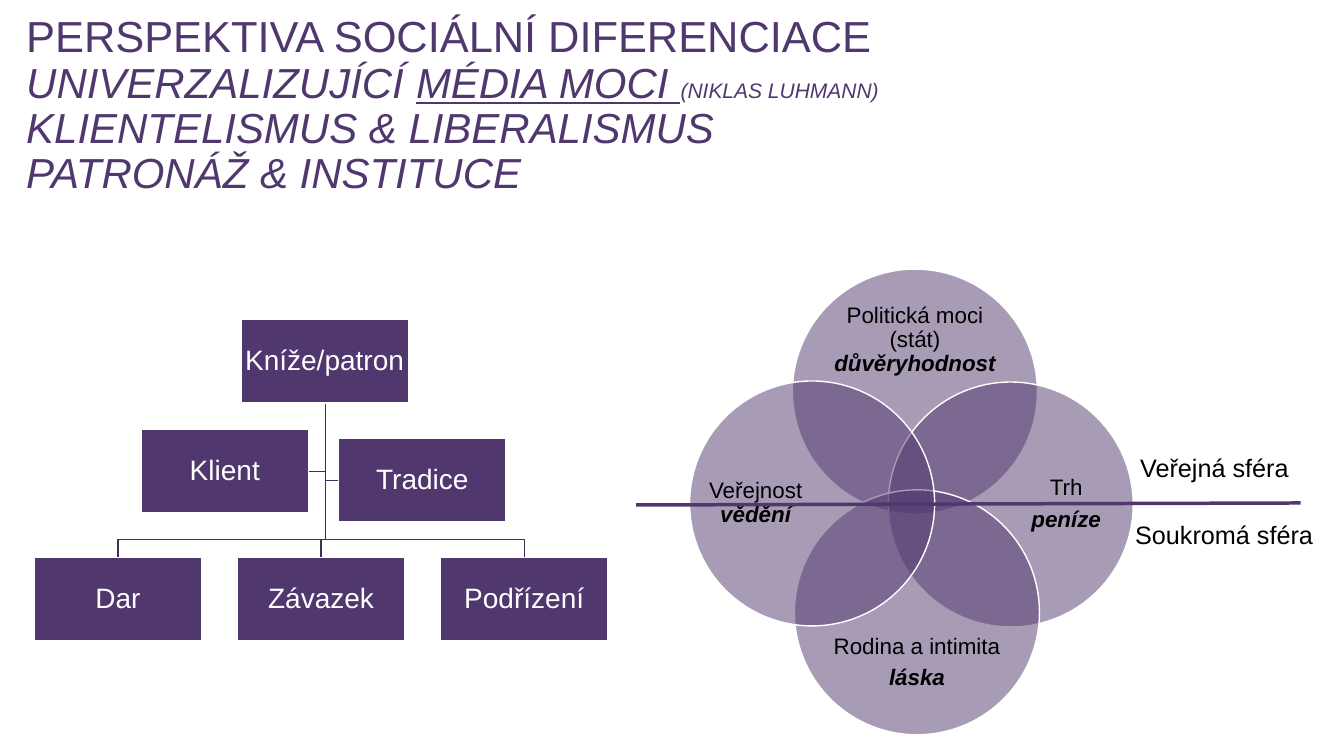
from dataclasses import dataclass

from lxml.etree import SubElement
from pptx import Presentation
from pptx.dml.color import RGBColor
from pptx.enum.shapes import MSO_CONNECTOR, MSO_SHAPE
from pptx.enum.text import MSO_ANCHOR, PP_ALIGN
from pptx.oxml.ns import qn
from pptx.util import Inches, Pt


@dataclass(frozen=True)
class Theme:
    font: str = "Arial"
    purple: str = "50386F"
    branch: str = "402D59"
    white: str = "FFFFFF"
    black: str = "000000"
    heading: int = 31
    subheading: int = 30
    source: int = 15
    node: int = 20
    circle: int = 16
    sphere: int = 18
    tight: float = 0.9
    gap: float = 5.5


@dataclass(frozen=True)
class Span:
    text: str
    size: float
    bold: bool = False
    italic: bool = False
    underline: bool = False


class Sketch:
    """Draws on a grid of square cells, ten to the inch."""

    def __init__(self, page, theme):
        self.page = page
        self.theme = theme

    def cells(self, *counts):
        return [Inches(count / 10) for count in counts]

    def colour(self, value):
        return RGBColor.from_string(value)

    def outline(self, item, colour, width=1):
        item.line.color.rgb = self.colour(colour)
        item.line.width = Pt(width)

    def fill_text(self, frame, paras, colour, inset=0.0, align=PP_ALIGN.CENTER,
                  anchor=MSO_ANCHOR.MIDDLE, spacing=None, wrap=True):
        """Each paragraph is a list of lines, each line a list of spans."""
        frame.word_wrap = wrap
        frame.vertical_anchor = anchor
        frame.margin_left = frame.margin_right = Inches(inset)
        frame.margin_top = frame.margin_bottom = Inches(inset / 2)
        for index, lines in enumerate(paras):
            para = frame.add_paragraph() if index else frame.paragraphs[0]
            para.alignment = align
            para.line_spacing = spacing or self.theme.tight
            if index:
                para.space_before = Pt(self.theme.gap)
            for number, spans in enumerate(lines):
                if number:
                    para.add_line_break()
                for span in spans:
                    run = para.add_run()
                    run.text = span.text
                    run.font.name = self.theme.font
                    run.font.size = Pt(span.size)
                    run.font.bold = span.bold
                    run.font.italic = span.italic
                    run.font.underline = span.underline
                    run.font.color.rgb = self.colour(colour)

    def text(self, place, paras, colour, **style):
        box = self.page.shapes.add_textbox(*self.cells(*place))
        self.fill_text(box.text_frame, paras, colour, **style)

    def shape(self, kind, place):
        item = self.page.shapes.add_shape(kind, *self.cells(*place))
        item.shadow.inherit = False
        item.fill.solid()
        item.fill.fore_color.rgb = self.colour(self.theme.purple)
        self.outline(item, self.theme.white)
        return item

    def node(self, place, label):
        item = self.shape(MSO_SHAPE.RECTANGLE, place)
        self.fill_text(item.text_frame, [[[Span(label, self.theme.node)]]],
                       self.theme.white, inset=0.01)

    def circle(self, left, top, size):
        item = self.shape(MSO_SHAPE.OVAL, (left, top, size, size))
        fill_colour = item._element.spPr.find(qn("a:solidFill"))[0]
        SubElement(fill_colour, qn("a:alpha"), val="50000")

    def branch(self, points):
        start, *rest = [self.cells(*point) for point in points]
        builder = self.page.shapes.build_freeform(*start, scale=1.0)
        builder.add_line_segments(rest, close=False)
        item = builder.convert_to_shape()
        item.shadow.inherit = False
        item.fill.background()
        self.outline(item, self.theme.branch)

    def line(self, start, end, width):
        item = self.page.shapes.add_connector(
            MSO_CONNECTOR.STRAIGHT, *self.cells(*start, *end))
        self.outline(item, self.theme.purple, width)
        SubElement(item._element.spPr, qn("a:effectLst"))


def draw_title(sketch):
    theme = sketch.theme
    size = theme.subheading
    lines = [
        [Span("PERSPEKTIVA SOCIÁLNÍ DIFERENCIACE", theme.heading)],
        [Span("UNIVERZALIZUJÍCÍ ", size, italic=True),
         Span("MÉDIA MOCI ", size, italic=True, underline=True),
         Span("(NIKLAS LUHMANN)", theme.source, italic=True)],
        [Span("KLIENTELISMUS & LIBERALISMUS", size, italic=True)],
        [Span("PATRONÁŽ & INSTITUCE", size, italic=True)],
    ]
    sketch.text((2.6, 1.5, 122.1, 21), [lines], theme.purple,
                align=PP_ALIGN.LEFT, anchor=MSO_ANCHOR.TOP)


def draw_circles(sketch):
    theme = sketch.theme
    # Circle corner, text area, name, medium, whether they share a paragraph
    circles = [
        ((78.6, 26.7), (81.4, 29.9, 18.7, 7.7),
         "Politická moci (stát)", "důvěryhodnost", True),
        ((88.1, 37.9), (101.1, 40.7, 9.3, 18.7), "Trh", "peníze", False),
        ((78.8, 48.6), (81.6, 61.9, 18.7, 7.7),
         "Rodina a intimita", "láska", False),
        ((68.4, 37.8), (70.3, 40.6, 9.3, 18.7), "Veřejnost", "vědění", True),
    ]
    for corner, area, name, medium, joined in circles:
        sketch.circle(*corner, 24.3)
        strong = Span(medium, theme.circle, bold=True, italic=True)
        if joined:
            paras = [[[Span(name + " ", theme.circle), strong]]]
        else:
            paras = [[[Span(name, theme.circle)]], [[strong]]]
        sketch.text(area, paras, theme.black)


def draw_hierarchy(sketch):
    width, height = 16.6, 8.3
    trunk, trunk_top, fork = 32.3, 40, 53.5
    klient, tradice = (14, 42.6), (33.6, 43.5)
    children = [(3.4 + 20.15 * step, 55.3) for step in range(3)]

    # Branches: two to the sides, three to the bottom row
    for (left, top), edge in ((tradice, 0), (klient, width)):
        middle = top + height / 2
        sketch.branch([(trunk, trunk_top), (trunk, middle),
                       (left + edge, middle)])
    for left, top in children:
        centre = left + width / 2
        sketch.branch([(trunk, trunk_top), (trunk, fork),
                       (centre, fork), (centre, top)])

    # Boxes
    corners = [(23.9, 31.7), *children, klient, tradice]
    labels = ["Kníže/patron", "Dar", "Závazek", "Podřízení", "Klient", "Tradice"]
    for corner, label in zip(corners, labels):
        sketch.node((*corner, width, height), label)


def draw_spheres(sketch):
    theme = sketch.theme
    sketch.line((63.1, 50.1), (129, 49.9), 2.5)
    for place, label in (((111.6, 51, 19.8, 4), "Soukromá sféra"),
                         ((112.1, 44.4, 16.9, 4), "Veřejná sféra")):
        sketch.text(place, [[[Span(label, theme.sphere)]]], theme.black,
                    inset=0.1, align=PP_ALIGN.LEFT, anchor=MSO_ANCHOR.TOP,
                    spacing=1.0, wrap=False)


def main():
    deck = Presentation()
    deck.slide_width, deck.slide_height = Inches(13.33), Inches(7.5)
    page = deck.slides.add_slide(deck.slide_layouts[6])
    sketch = Sketch(page, Theme())
    draw_title(sketch)
    draw_circles(sketch)
    draw_hierarchy(sketch)
    draw_spheres(sketch)
    deck.save("out.pptx")


if __name__ == "__main__":
    main()
